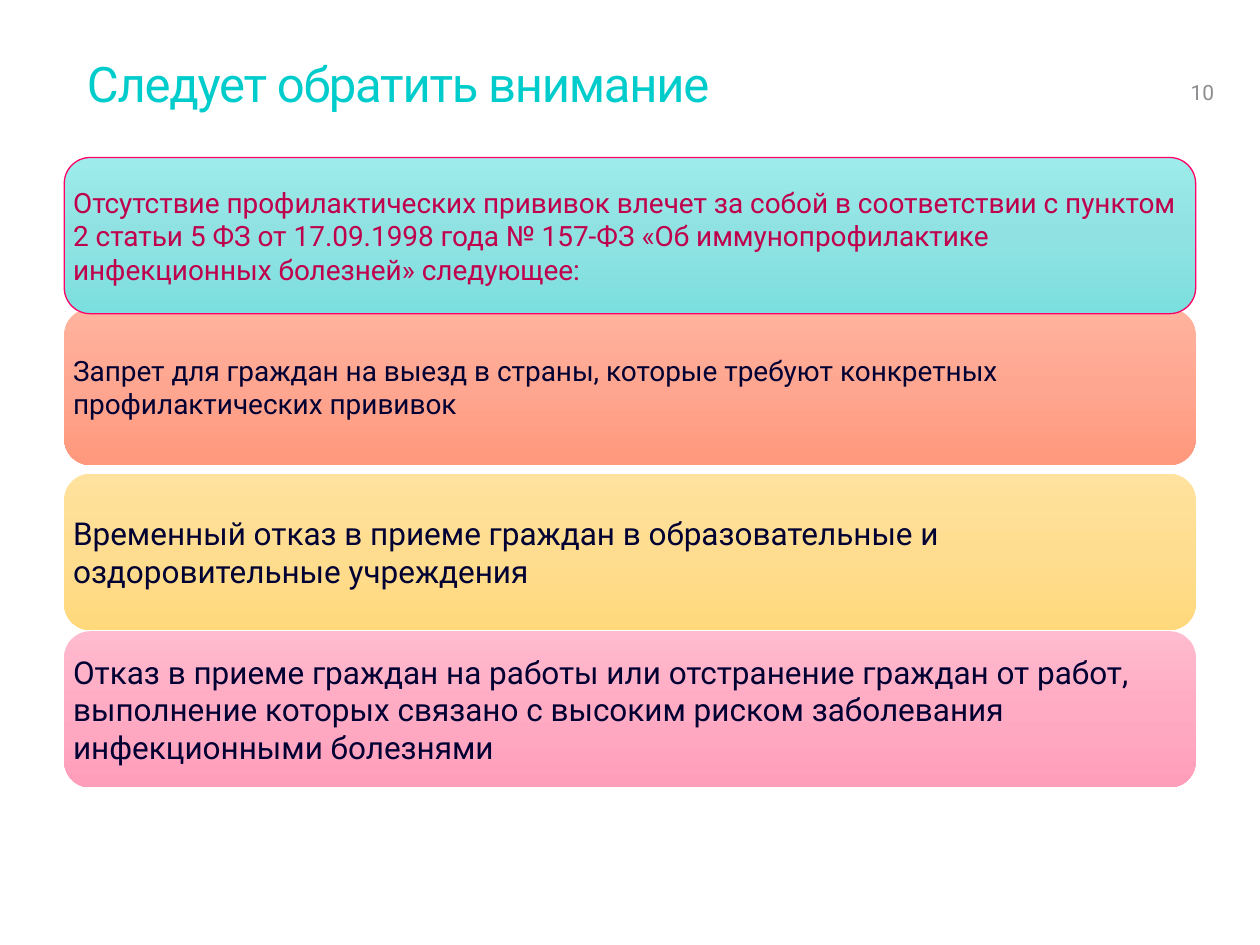
"""Build a slide listing the consequences of missing preventive vaccinations."""
from copy import deepcopy
from dataclasses import dataclass

from pptx import Presentation
from pptx.dml.color import RGBColor
from pptx.enum.shapes import MSO_SHAPE
from pptx.enum.text import MSO_ANCHOR, PP_ALIGN
from pptx.slide import Slide
from pptx.text.text import TextFrame, _Run
from pptx.util import Inches, Pt

ROUNDED = MSO_SHAPE.ROUNDED_RECTANGLE
TOP, MIDDLE, BOTTOM = MSO_ANCHOR.TOP, MSO_ANCHOR.MIDDLE, MSO_ANCHOR.BOTTOM
LEFT = PP_ALIGN.LEFT

FONT = "Roboto"
COLORS = {
    "title": "00CCCC",
    "number": "8C8C90",
    "text": "000033",
    "accent": "BF004C",
    "outline": "FF0066",
}
GRADIENTS = {
    "teal": ("9DEBEB", "90E2E2", "7CDFDF"),
    "coral": ("FFB39E", "FFA690", "FF987C"),
    "yellow": ("FFE29E", "FFDD90", "FFD97C"),
    "pink": ("FFBBCF", "FFABC3", "FF9EBB"),
}
PANEL_LEFT, PANEL_WIDTH, PANEL_HEIGHT = 0.51, 8.98, 1.24
PANEL_INSET = 0.01


@dataclass
class Panel:
    """A rounded gradient panel with one statement."""

    top: float
    gradient: str
    size: int
    text: str
    color: str = "text"
    outline: str = ""


PANELS = [
    Panel(2.45, "coral", 16,
          "Запрет для граждан на выезд в страны, которые требуют "
          "конкретных профилактических прививок"),
    Panel(3.76, "yellow", 18,
          "Временный отказ в приеме граждан в образовательные и "
          "оздоровительные учреждения"),
    Panel(5.01, "pink", 18,
          "Отказ в приеме граждан на работы или отстранение граждан от работ, "
          "выполнение которых связано с высоким риском заболевания "
          "инфекционными болезнями"),
    Panel(1.25, "teal", 16,
          "Отсутствие профилактических прививок влечет за собой в соответствии "
          "с пунктом 2 статьи 5 ФЗ от 17.09.1998 года № 157-ФЗ "
          "«Об иммунопрофилактике инфекционных болезней» следующее:",
          "accent", "outline"),
]


def write_text(frame: TextFrame, text: str, size: int, color: str,
               anchor: MSO_ANCHOR, inset_x: float, inset_y: float) -> _Run:
    """Fill a text frame with one styled run and return it."""
    frame.word_wrap = True
    frame.vertical_anchor = anchor
    frame.margin_left = frame.margin_right = Inches(inset_x)
    frame.margin_top = frame.margin_bottom = Inches(inset_y)
    para = frame.paragraphs[0]
    para.alignment = LEFT
    span = para.add_run()
    span.text = text
    span.font.name = FONT
    span.font.size = Pt(size)
    span.font.color.rgb = RGBColor.from_string(COLORS[color])
    return span


def add_panel(page: Slide, panel: Panel) -> None:
    """Draw one panel with its gradient, outline and statement."""
    box = page.shapes.add_shape(ROUNDED, Inches(PANEL_LEFT), Inches(panel.top),
                                Inches(PANEL_WIDTH), Inches(PANEL_HEIGHT))
    box.shadow.inherit = False
    box.fill.gradient()
    box.fill.gradient_angle = 270
    first_stop = box.element.spPr.xpath(".//a:gs")[0]
    first_stop.addnext(deepcopy(first_stop))
    shades = GRADIENTS[panel.gradient]
    for index, (stop, shade) in enumerate(zip(box.fill.gradient_stops, shades)):
        stop.position = index / 2
        stop.color.rgb = RGBColor.from_string(shade)
    if panel.outline:
        box.line.color.rgb = RGBColor.from_string(COLORS[panel.outline])
        box.line.width = Pt(0.75)
    else:
        box.line.fill.background()
    write_text(box.text_frame, panel.text, panel.size, panel.color,
               MIDDLE, PANEL_INSET, PANEL_INSET)


def add_title(page: Slide) -> None:
    """Write the slide heading."""
    box = page.shapes.add_textbox(Inches(0.69), Inches(0.4),
                                  Inches(8.62), Inches(1.03))
    span = write_text(box.text_frame, "Следует обратить внимание", 28, "title",
                      TOP, 0, 0.05)
    span.font._element.set("spc", "-70")
    box.text_frame.paragraphs[0].line_spacing = Pt(32)


def add_page_number(page: Slide) -> None:
    """Write the page number."""
    box = page.shapes.add_textbox(Inches(9.45), Inches(0.4),
                                  Inches(0.38), Inches(0.47))
    write_text(box.text_frame, "10", 12, "number", BOTTOM, 0, 0.04)


def main() -> None:
    """Build and save the deck."""
    deck = Presentation()
    deck.slide_width, deck.slide_height = Inches(10), Inches(7.5)
    page = deck.slides.add_slide(deck.slide_layouts[6])
    add_title(page)
    add_page_number(page)
    for panel in PANELS:
        add_panel(page, panel)
    deck.save("out.pptx")


if __name__ == "__main__":
    main()
